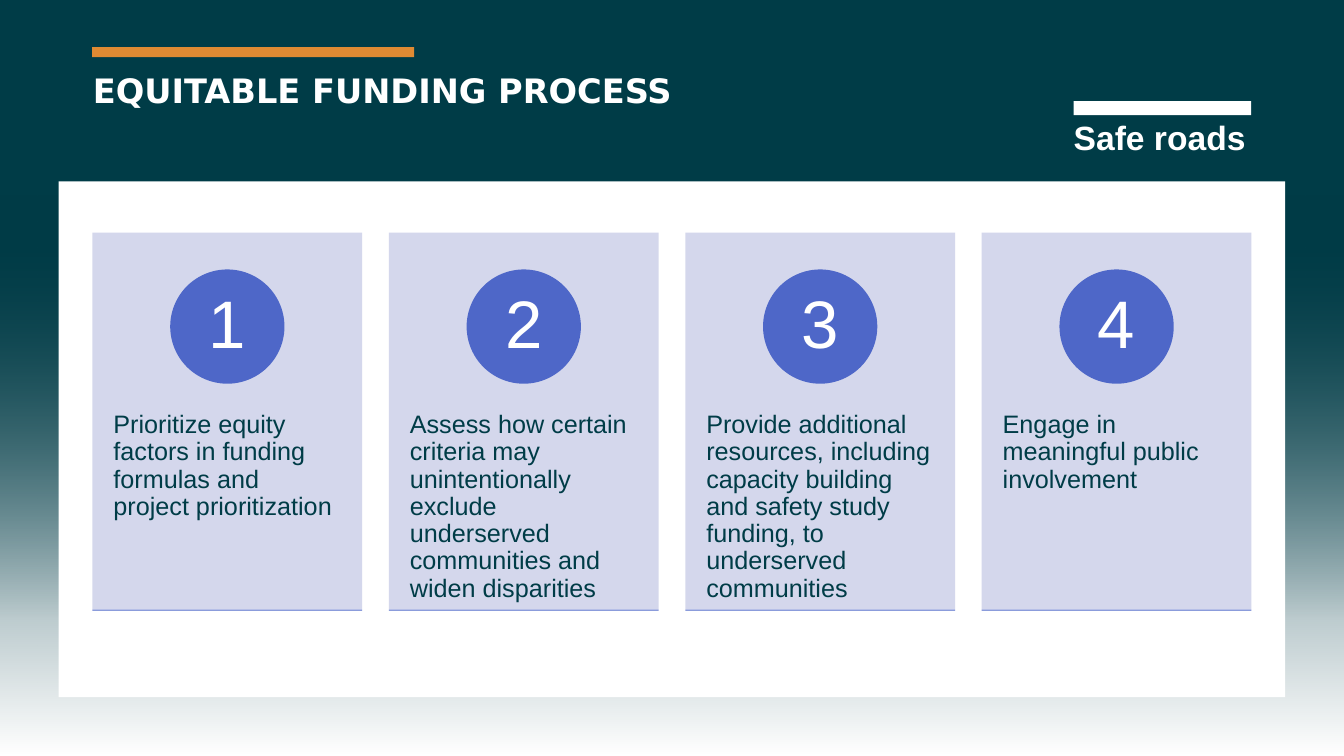
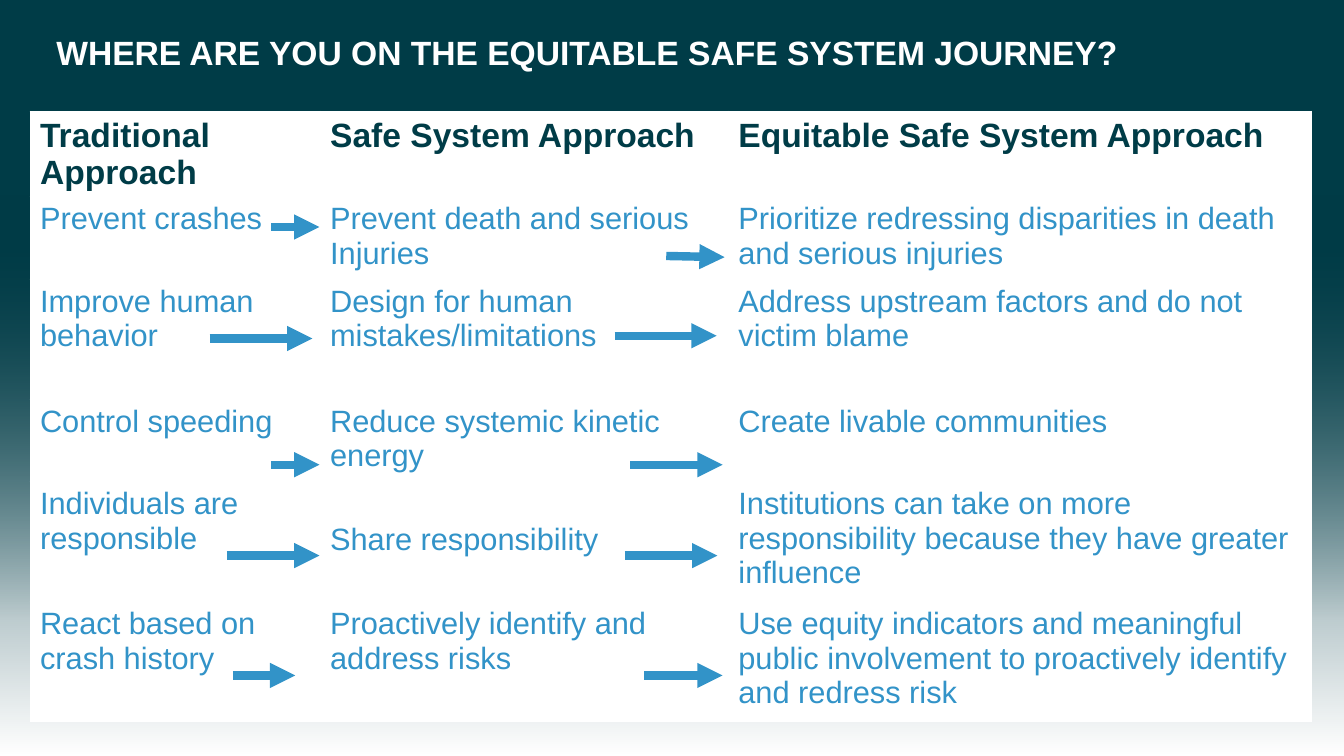
from dataclasses import dataclass

import lxml.etree
import pptx
import pptx.dml.color
import pptx.enum.shapes
import pptx.enum.text
import pptx.oxml.ns
import pptx.util

Cm = pptx.util.Cm
Pt = pptx.util.Pt
qn = pptx.oxml.ns.qn
RGBColor = pptx.dml.color.RGBColor
Shape = pptx.enum.shapes.MSO_SHAPE
Anchor = pptx.enum.text.MSO_ANCHOR
Align = pptx.enum.text.PP_ALIGN


@dataclass(frozen=True)
class Theme:
    teal: str = "003C47"
    white: str = "FFFFFF"
    lilac: str = "D0D3EB"
    indigo: str = "4E67C8"
    blue: str = "3293C8"
    orange: str = "DF8A33"
    font: str = "Arial"
    title_font: str = "DejaVu Sans"
    heading_size: int = 24
    cell_size: int = 22
    body_size: int = 18
    number_size: int = 48


theme = Theme()


def write(frame, text, *, size, color, bold=False, font=theme.font,
          align=Align.LEFT, anchor=Anchor.TOP, spacing=0.9, margins=(0, 0)):
    frame.word_wrap = True
    frame.auto_size = pptx.enum.text.MSO_AUTO_SIZE.NONE
    frame.vertical_anchor = anchor
    frame.margin_left = frame.margin_right = Cm(margins[0])
    frame.margin_top = frame.margin_bottom = Cm(margins[1])
    para = frame.paragraphs[0]
    para.alignment = align
    para.line_spacing = spacing
    span = para.add_run()
    span.text = text
    span.font.name = font
    span.font.size = Pt(size)
    span.font.bold = bold
    span.font.color.rgb = RGBColor.from_string(color)


def block(page, left, top, width, height, color, kind=Shape.RECTANGLE, fade=False, alpha=None):
    shape = page.shapes.add_shape(kind, Cm(left), Cm(top), Cm(width), Cm(height))
    shape.shadow.inherit = False
    shape.line.fill.background()
    if fade:
        shape.fill.gradient()
        shape.fill.gradient_angle = 270
        for stop, position in zip(shape.fill.gradient_stops, (0, 1)):
            stop.position = position
            stop.color.rgb = RGBColor.from_string(color)
        alpha = 0
    else:
        shape.fill.solid()
        shape.fill.fore_color.rgb = RGBColor.from_string(color)
    if alpha is not None:
        last_color = list(shape.element.spPr.iter(qn("a:srgbClr")))[-1]
        lxml.etree.SubElement(last_color, qn("a:alpha")).set("val", str(alpha * 1000))
    return shape


deck = pptx.Presentation()
deck.slide_width = Cm(33.87)
deck.slide_height = Cm(19.05)
layout = deck.slide_layouts[5]
for holder in list(layout.placeholders):
    if holder.placeholder_format.idx != 0:
        holder.element.getparent().remove(holder.element)

funding = deck.slides.add_slide(layout)
journey = deck.slides.add_slide(layout)

backdrop = []
for solid_height, fade_height in ((6.05, 13), (4.93, 10.62)):
    backdrop.append(block(funding, 0, 0, 33.87, solid_height, theme.teal))
    backdrop.append(block(funding, 0, solid_height, 33.87, fade_height, theme.teal, fade=True))
backdrop.append(block(funding, 1.48, 4.57, 30.91, 13, theme.white))
for shape in backdrop:
    layout.shapes.element.append(shape.element)

titles = (
    (funding, "EQUITABLE FUNDING PROCESS", 2.34, 1.85, theme.title_font),
    (journey, "WHERE ARE YOU ON THE EQUITABLE SAFE SYSTEM JOURNEY?", 1.42, 0.89, theme.font),
)
for page, text, left, top, font in titles:
    title = page.shapes.title
    title.left, title.top, title.width, title.height = Cm(left), Cm(top), Cm(29.21), Cm(0.97)
    write(title.text_frame, text, size=theme.heading_size, color=theme.white,
          bold=True, font=font, anchor=Anchor.MIDDLE)

steps = (
    "Prioritize equity factors in funding formulas and project prioritization",
    "Assess how certain criteria may unintentionally exclude underserved communities "
    "and widen disparities",
    "Provide additional resources, including capacity building and safety study funding, "
    "to underserved communities",
    "Engage in meaningful public involvement",
)
card_left, card_top, card_width, card_height, card_pitch = 2.33, 5.86, 6.8, 9.5, 7.47
circle_size = 2.88
for index, step in enumerate(steps):
    left = card_left + index * card_pitch
    block(funding, left, card_top, card_width, card_height, theme.lilac, alpha=90)
    box = funding.shapes.add_textbox(Cm(left), Cm(9.47), Cm(card_width), Cm(5.72))
    write(box.text_frame, step, size=theme.body_size, color=theme.teal, margins=(0.53, 0.91))
    circle = block(funding, left + (card_width - circle_size) / 2, 6.79,
                   circle_size, circle_size, theme.indigo, kind=Shape.OVAL)
    write(circle.text_frame, str(index + 1), size=theme.number_size, color=theme.white,
          align=Align.CENTER, anchor=Anchor.MIDDLE)
    block(funding, left, card_top + card_height, card_width, 0.03, theme.indigo)

block(funding, 27.06, 2.55, 4.47, 0.35, theme.white)
box = funding.shapes.add_textbox(Cm(27.06), Cm(3.05), Cm(4.5), Cm(1.19))
write(box.text_frame, "Safe roads", size=theme.heading_size, color=theme.white, bold=True)
block(funding, 2.32, 1.19, 8.12, 0.25, theme.orange)

approaches = (
    ("Traditional Approach", "Safe System Approach", "Equitable Safe System Approach"),
    ("Prevent crashes", "Prevent death and serious Injuries",
     "Prioritize redressing disparities in death and serious injuries"),
    ("Improve human behavior", "Design for human mistakes/limitations",
     "Address upstream factors and do not victim blame"),
    ("Control speeding", "Reduce systemic kinetic energy", "Create livable communities"),
    ("Individuals are responsible", "Share responsibility",
     "Institutions can take on more responsibility because they have greater influence"),
    ("React based on crash history", "Proactively identify and address risks",
     "Use equity indicators and meaningful public involvement to proactively identify "
     "and redress risk"),
)
column_widths = (7.31, 10.29, 14.68)
row_heights = (2.08, 2.08, 3.02, 2.08, 3.02, 3.02)
table = journey.shapes.add_table(
    len(row_heights), len(column_widths), Cm(0.76), Cm(2.81),
    Cm(sum(column_widths)), Cm(sum(row_heights))).table
for column, width in zip(table.columns, column_widths):
    column.width = Cm(width)
for row, height, texts in zip(table.rows, row_heights, approaches):
    row.height = Cm(height)
    header = texts is approaches[0]
    for cell, text in zip(row.cells, texts):
        cell.fill.solid()
        cell.fill.fore_color.rgb = RGBColor.from_string(theme.white)
        cell.margin_left = cell.margin_right = Cm(0.25)
        cell.margin_top = cell.margin_bottom = Cm(0.13)
        para = cell.text_frame.paragraphs[0]
        span = para.add_run()
        span.text = text
        span.font.name = theme.font
        span.font.size = Pt(theme.heading_size if header else theme.cell_size)
        span.font.bold = header
        span.font.color.rgb = RGBColor.from_string(theme.teal if header else theme.blue)
table.cell(4, 1).margin_top = Cm(1.02)

arrows = (
    (6.83, 5.72, 8.05, 5.72),
    (16.79, 6.45, 18.26, 6.48),
    (5.28, 8.53, 7.87, 8.53),
    (15.49, 8.46, 18.06, 8.46),
    (6.83, 11.71, 8.05, 11.71),
    (15.88, 11.71, 18.21, 11.71),
    (5.72, 14, 8.05, 14),
    (15.75, 14, 18.08, 14),
    (5.87, 17.02, 7.44, 17.02),
    (16.23, 17.02, 18.21, 17.02),
)
for ends in arrows:
    arrow = journey.shapes.add_connector(
        pptx.enum.shapes.MSO_CONNECTOR.STRAIGHT, *(Cm(end) for end in ends))
    arrow.line.width = Pt(6)
    arrow.line.color.rgb = RGBColor.from_string(theme.blue)
    properties = arrow.element.spPr
    lxml.etree.SubElement(properties.find(qn("a:ln")), qn("a:tailEnd")).set("type", "triangle")
    lxml.etree.SubElement(properties, qn("a:effectLst"))

deck.save("out.pptx")
